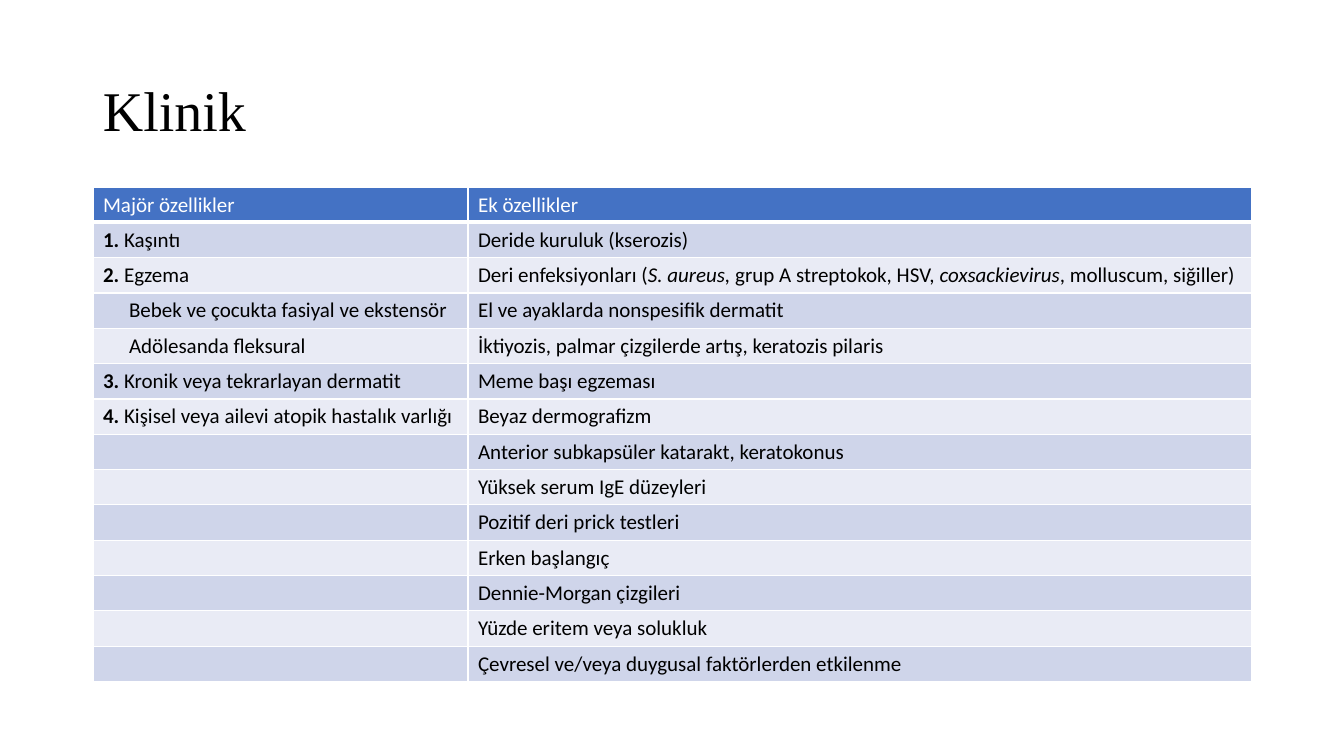
from dataclasses import dataclass

from lxml import etree
from pptx import Presentation
from pptx import util as u
from pptx.dml.color import RGBColor
from pptx.enum import text
from pptx.oxml.ns import qn

EMU_PER_PX = 914400 / 100.8


@dataclass(frozen=True)
class Theme:
    title_font: str = "Times New Roman"
    body_font: str = "Calibri"
    title_size: int = 40
    body_size: int = 15
    ink: str = "000000"
    white: str = "FFFFFF"
    header: str = "4472C4"
    bands: tuple = ("CFD5EA", "E9EBF5")
    rule: float = 1
    header_rule: float = 3


THEME = Theme()

# Table content: (number, text) is a numbered item, a plain string is an indented sub-item
MAJOR_FEATURES = [
    ("1. ", "Kaşıntı"),
    ("2. ", "Egzema"),
    "Bebek ve çocukta fasiyal ve ekstensör",
    "Adölesanda fleksural",
    ("3. ", "Kronik veya tekrarlayan dermatit"),
    ("4. ", "Kişisel veya ailevi atopik hastalık varlığı"),
]
# In a list of pieces every second one is italic
EXTRA_FEATURES = [
    ["Deride kuruluk (kserozis)"],
    ["Deri enfeksiyonları (", "S. aureus, ", "grup A streptokok, HSV, ",
     "coxsackievirus", ", molluscum, siğiller)"],
    ["El ve ayaklarda nonspesifik dermatit"],
    ["İktiyozis, palmar çizgilerde artış, keratozis pilaris"],
    ["Meme başı egzeması"],
    ["Beyaz dermografizm"],
    ["Anterior subkapsüler katarakt, keratokonus"],
    ["Yüksek serum IgE düzeyleri"],
    ["Pozitif deri prick testleri"],
    ["Erken başlangıç"],
    ["Dennie-Morgan çizgileri"],
    ["Yüzde eritem veya solukluk"],
    ["Çevresel ve/veya duygusal faktörlerden etkilenme"],
]
COLUMN_WIDTHS = (26, 349, 784)
ROW_HEIGHT = 35


def px(length):
    return u.Emu(round(length * EMU_PER_PX))


def add_run(paragraph, words, *, font=THEME.body_font, size=THEME.body_size,
            color=THEME.ink, bold=False, italic=False):
    run = paragraph.add_run()
    run.text = words
    run.font.name = font
    run.font.size = u.Pt(size)
    run.font.bold = bold
    run.font.italic = italic
    run.font.color.rgb = RGBColor.from_string(color)


def add_title(slide, words):
    shape = slide.shapes.add_textbox(px(93), px(40), px(1159), px(146))
    frame = shape.text_frame
    frame.word_wrap = True
    frame.vertical_anchor = text.MSO_ANCHOR.MIDDLE
    paragraph = frame.paragraphs[0]
    paragraph.line_spacing = 0.9
    add_run(paragraph, words, font=THEME.title_font, size=THEME.title_size)


def format_cell(cell, fill, *, open_side=None, bottom=THEME.rule):
    properties = cell._tc.get_or_add_tcPr()
    for side in ("L", "R", "T", "B"):
        width = bottom if side == "B" else THEME.rule
        line = etree.SubElement(properties, qn(f"a:ln{side}"), w=str(u.Pt(width)))
        if side == open_side:
            etree.SubElement(line, qn("a:noFill"))
        else:
            solid = etree.SubElement(line, qn("a:solidFill"))
            etree.SubElement(solid, qn("a:srgbClr"), val=THEME.white)
    cell.fill.solid()
    cell.fill.fore_color.rgb = RGBColor.from_string(fill)


def set_empty_size(cell):
    """Keep a cell without text as low as the rows of text."""
    paragraph = cell.text_frame.paragraphs[0]
    if not paragraph.runs:
        etree.SubElement(paragraph._p, qn("a:endParaRPr"), sz=str(THEME.body_size * 100))


def add_feature_table(slide):
    row_count = len(EXTRA_FEATURES) + 1
    frame = slide.shapes.add_table(row_count, len(COLUMN_WIDTHS), px(93), px(187),
                                   px(sum(COLUMN_WIDTHS)), px(ROW_HEIGHT * row_count))
    table = frame.table
    table.first_row = False
    table.horz_banding = False
    for column, width in zip(table.columns, COLUMN_WIDTHS):
        column.width = px(width)

    # Header row
    for index, words in ((0, "Majör özellikler"), (2, "Ek özellikler")):
        add_run(table.cell(0, index).text_frame.paragraphs[0], words, color=THEME.white)

    # Feature rows
    for row, pieces in enumerate(EXTRA_FEATURES, 1):
        paragraph = table.cell(row, 2).text_frame.paragraphs[0]
        for index, words in enumerate(pieces):
            add_run(paragraph, words, italic=index % 2 == 1)
    for row, feature in enumerate(MAJOR_FEATURES, 1):
        if isinstance(feature, str):
            add_run(table.cell(row, 1).text_frame.paragraphs[0], feature)
        else:
            paragraph = table.cell(row, 0).text_frame.paragraphs[0]
            number, words = feature
            add_run(paragraph, number, bold=True)
            add_run(paragraph, words)

    # Fills, borders and merged cells
    sub_rows = [row for row, feature in enumerate(MAJOR_FEATURES, 1)
                if isinstance(feature, str)]
    for row in range(row_count):
        fill = THEME.bands[(row - 1) % 2] if row else THEME.header
        bottom = THEME.rule if row else THEME.header_rule
        open_sides = ("R", "L", None) if row in sub_rows else (None, None, None)
        for column, open_side in enumerate(open_sides):
            cell = table.cell(row, column)
            format_cell(cell, fill, open_side=open_side, bottom=bottom)
            cell.vertical_anchor = text.MSO_ANCHOR.TOP
            set_empty_size(cell)
        if row not in sub_rows:
            table.cell(row, 0).merge(table.cell(row, 1))


def main():
    presentation = Presentation()
    presentation.slide_width = px(1344)
    presentation.slide_height = px(756)
    slide = presentation.slides.add_slide(presentation.slide_layouts[6])
    add_title(slide, "Klinik")
    add_feature_table(slide)
    presentation.save("out.pptx")


if __name__ == "__main__":
    main()
